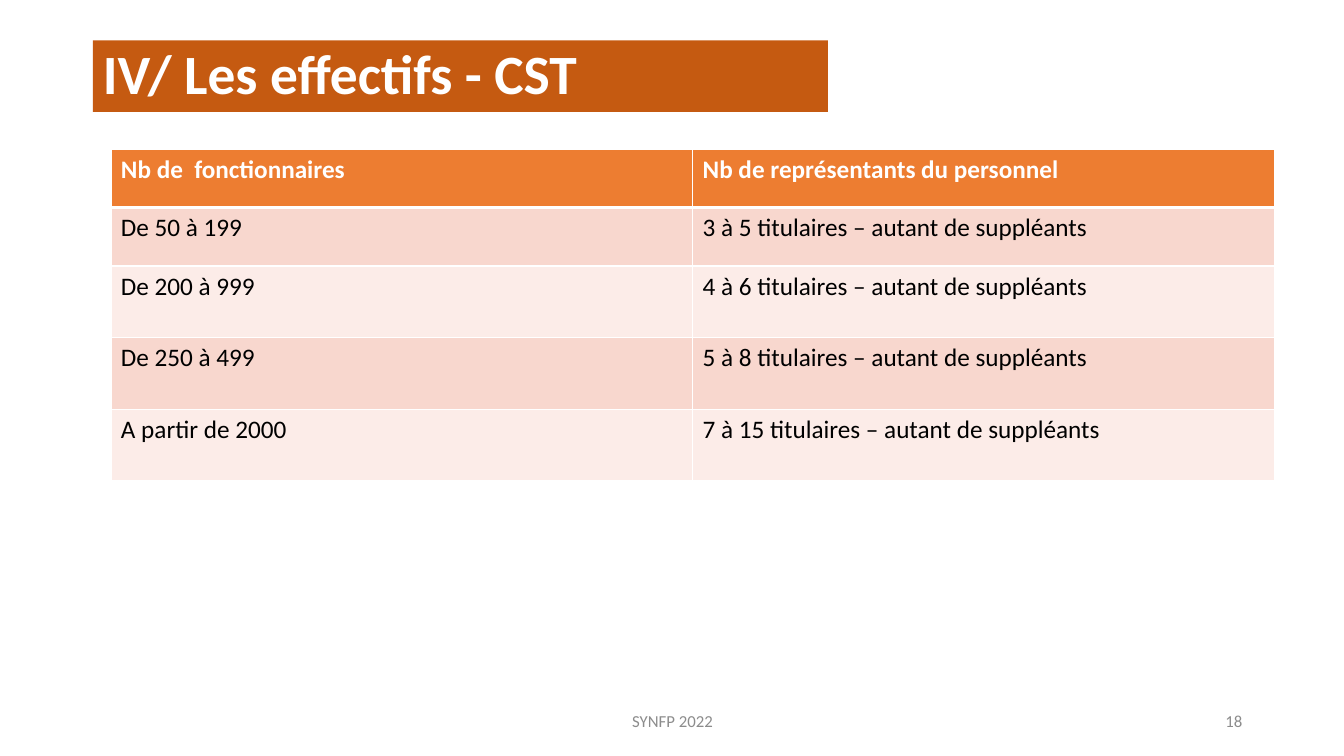
"""Build the slide on staff numbers and representatives in the CST."""
from lxml.etree import SubElement
from pptx import Presentation
from pptx.dml.color import RGBColor
from pptx.enum.text import MSO_ANCHOR, MSO_AUTO_SIZE, PP_ALIGN
from pptx.oxml.ns import qn
from pptx.util import Inches, Pt

FONT = "Calibri"
WHITE = "FFFFFF"
BLACK = "000000"
GREY = "8C8C8C"
DARK_ORANGE = "C55A11"
ORANGE = "ED7D31"
BANDS = ("F8D7CE", "FCECE8")

HEADCOUNTS = [
    ("Nb de  fonctionnaires", "Nb de représentants du personnel"),
    ("De 50 à 199", "3 à 5 titulaires – autant de suppléants"),
    ("De 200 à 999", "4 à 6 titulaires – autant de suppléants"),
    ("De 250 à 499", "5 à 8 titulaires – autant de suppléants"),
    ("A partir de 2000", "7 à 15 titulaires – autant de suppléants"),
]
COLUMN_WIDTH = 5.77
ROW_HEIGHTS = (0.58, 0.58, 0.71, 0.71, 0.71)


def color(hex_code):
    """Return the colour for a hex string."""
    return RGBColor.from_string(hex_code)


def fill_solid(target, hex_code):
    """Fill a shape or a cell with one colour."""
    target.fill.solid()
    target.fill.fore_color.rgb = color(hex_code)


def write(frame, text, size, hex_code, bold=False, align=PP_ALIGN.LEFT):
    """Write one formatted paragraph into a text frame."""
    frame.text = text
    paragraph = frame.paragraphs[0]
    paragraph.alignment = align
    font = paragraph.font
    font.name, font.size, font.bold = FONT, Pt(size), bold
    font.color.rgb = color(hex_code)


def place_title(slide, text):
    """Turn the title placeholder into an orange banner."""
    title = slide.shapes.title
    title.left, title.top = Inches(0.92), Inches(0.4)
    title.width, title.height = Inches(7.29), Inches(0.71)
    fill_solid(title, DARK_ORANGE)
    frame = title.text_frame
    write(frame, text, 39.6, WHITE, bold=True)
    frame.auto_size = MSO_AUTO_SIZE.NONE
    frame.vertical_anchor = MSO_ANCHOR.MIDDLE
    frame.paragraphs[0].line_spacing = 0.9


def add_footer(slide, text, left, width, align):
    """Add a small grey text at the foot of the slide."""
    box = slide.shapes.add_textbox(
        Inches(left), Inches(6.95), Inches(width), Inches(0.4))
    frame = box.text_frame
    frame.word_wrap = True
    frame.vertical_anchor = MSO_ANCHOR.MIDDLE
    write(frame, text, 12, GREY, align=align)


def set_borders(cell, top, bottom):
    """Draw white borders around a cell, with widths in points."""
    properties = cell._tc.get_or_add_tcPr()
    for side, width in (("L", 1), ("R", 1), ("T", top), ("B", bottom)):
        line = SubElement(properties, qn(f"a:ln{side}"), w=str(Pt(width)))
        solid = SubElement(line, qn("a:solidFill"))
        SubElement(solid, qn("a:srgbClr"), val=WHITE)


def add_headcount_table(slide):
    """Add the table of representatives by number of staff."""
    column_count = len(HEADCOUNTS[0])
    table = slide.shapes.add_table(
        len(HEADCOUNTS), column_count, Inches(1.1), Inches(1.48),
        Inches(COLUMN_WIDTH * column_count), Inches(sum(ROW_HEIGHTS))).table
    for column in table.columns:
        column.width = Inches(COLUMN_WIDTH)
    for index, (texts, height) in enumerate(zip(HEADCOUNTS, ROW_HEIGHTS)):
        table.rows[index].height = Inches(height)
        is_header = index == 0
        background = ORANGE if is_header else BANDS[(index - 1) % 2]
        for cell, text in zip(table.rows[index].cells, texts):
            set_borders(cell, top=3 if index == 1 else 1,
                        bottom=3 if is_header else 1)
            fill_solid(cell, background)
            write(cell.text_frame, text, 18,
                  WHITE if is_header else BLACK, bold=is_header)


def main():
    """Build and save the slide."""
    presentation = Presentation()
    presentation.slide_width = Inches(13.33)
    presentation.slide_height = Inches(7.5)
    slide = presentation.slides.add_slide(presentation.slide_layouts[5])
    place_title(slide, "IV/ Les effectifs - CST")
    add_footer(slide, "SYNFP 2022", 4.42, 4.5, PP_ALIGN.CENTER)
    add_footer(slide, "18", 9.42, 3, PP_ALIGN.RIGHT)
    add_headcount_table(slide)
    presentation.save("out.pptx")


if __name__ == "__main__":
    main()
